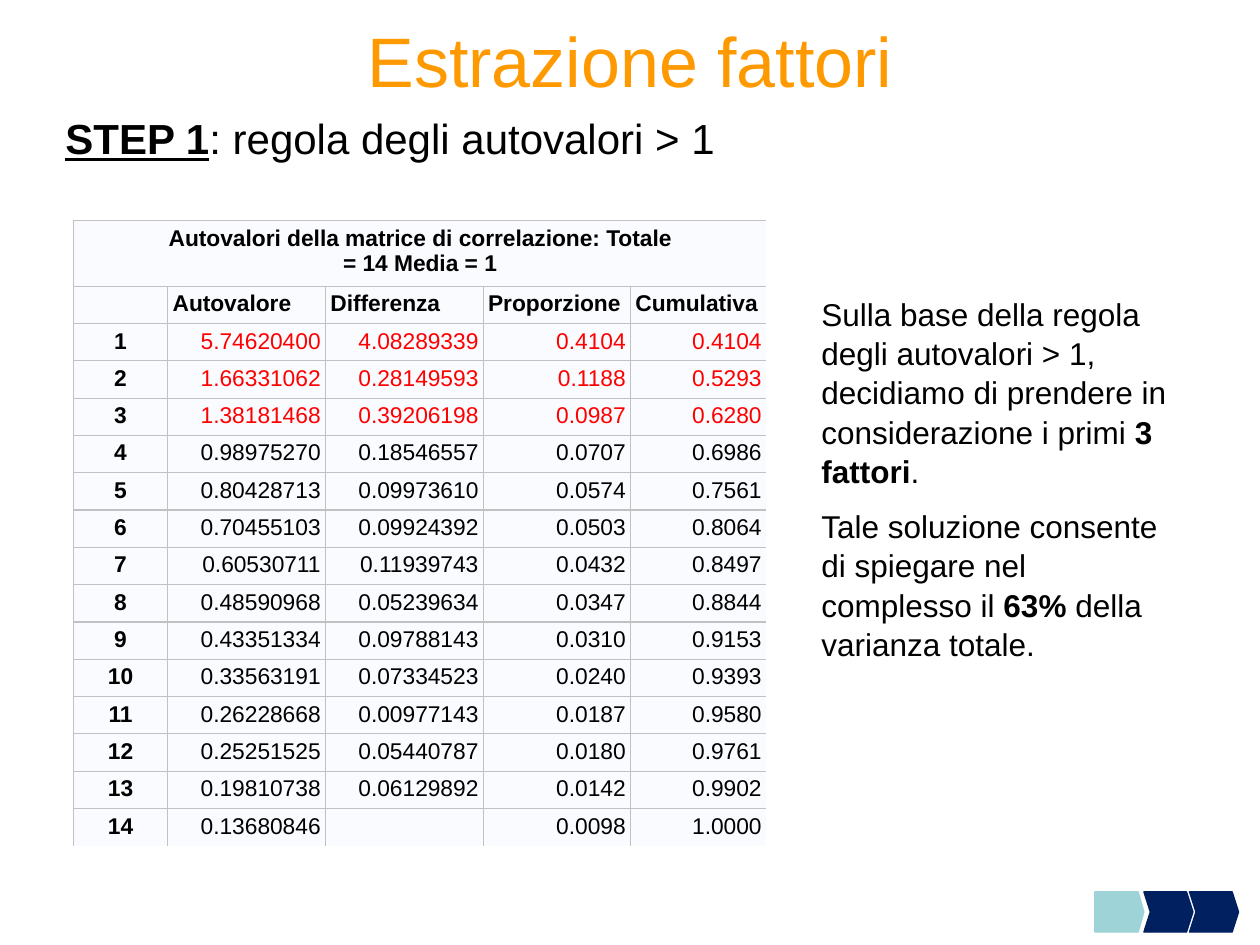
from dataclasses import dataclass

from lxml.etree import SubElement
from pptx import Presentation
from pptx.dml.color import RGBColor
from pptx.enum.shapes import MSO_SHAPE
from pptx.enum.text import MSO_ANCHOR, PP_ALIGN
from pptx.oxml.ns import qn
from pptx.util import Cm, Pt


@dataclass(frozen=True)
class Theme:
    font: str = "Arial"
    title: str = "FF9900"
    text: str = "000000"
    accent: str = "FF0000"
    cell: str = "FAFBFE"
    border: str = "C1C1C1"
    navy: str = "002060"
    aqua: str = "9ED3D7"
    title_size: float = 40
    step_size: float = 24
    body_size: float = 18
    table_size: float = 13
    line_width: float = 0.75
    leading: float = 1.04


THEME = Theme()
TABLE_TITLE = "Autovalori della matrice di correlazione: Totale\v= 14 Media = 1"
HEADERS = ["", "Autovalore", "Differenza", "Proporzione", "Cumulativa"]
EIGENVALUES = [
    ("5.74620400", "4.08289339", "0.4104", "0.4104"),
    ("1.66331062", "0.28149593", "0.1188", "0.5293"),
    ("1.38181468", "0.39206198", "0.0987", "0.6280"),
    ("0.98975270", "0.18546557", "0.0707", "0.6986"),
    ("0.80428713", "0.09973610", "0.0574", "0.7561"),
    ("0.70455103", "0.09924392", "0.0503", "0.8064"),
    ("0.60530711", "0.11939743", "0.0432", "0.8497"),
    ("0.48590968", "0.05239634", "0.0347", "0.8844"),
    ("0.43351334", "0.09788143", "0.0310", "0.9153"),
    ("0.33563191", "0.07334523", "0.0240", "0.9393"),
    ("0.26228668", "0.00977143", "0.0187", "0.9580"),
    ("0.25251525", "0.05440787", "0.0180", "0.9761"),
    ("0.19810738", "0.06129892", "0.0142", "0.9902"),
    ("0.13680846", "", "0.0098", "1.0000"),
]
COL_WIDTHS = [1.9, 3.18, 3.18, 2.97, 2.74]
TITLE_ROW, ROW = 1.32, 0.75
KEPT_FACTORS = 3


def set_attrs(obj, values):
    for name, value in values.items():
        setattr(obj, name, value)


def format_run(r, size, color=THEME.text, **extra):
    set_attrs(r.font, {"name": THEME.font, "size": Pt(size), **extra})
    r.font.color.rgb = RGBColor.from_string(color)


def add_text(s, box, paragraphs, size, color=THEME.text, frame=None, para=None):
    tf = s.shapes.add_textbox(*map(Cm, box)).text_frame
    set_attrs(tf, {"word_wrap": True, **(frame or {})})
    for i, runs in enumerate(paragraphs):
        p = tf.add_paragraph() if i else tf.paragraphs[0]
        set_attrs(p, para or {})
        if i:
            p.space_before = Pt(size / 2)
        for text, style in runs:
            r = p.add_run()
            r.text = text
            format_run(r, size, color, **style)


def set_borders(cell, last_col, last_row):
    tc_pr = cell._tc.get_or_add_tcPr()
    hidden = {"R": last_col, "B": last_row}
    for side in "LRTB":
        ln = SubElement(tc_pr, qn(f"a:ln{side}"), w=str(Pt(THEME.line_width)))
        if hidden.get(side):
            SubElement(ln, qn("a:noFill"))
        else:
            fill = SubElement(ln, qn("a:solidFill"))
            SubElement(fill, qn("a:srgbClr"), val=THEME.border)


def fill_cell(cell, text, align, color, bold):
    sides = ("left", "right", "top", "bottom")
    set_attrs(cell, {f"margin_{side}": Cm(0.1) for side in sides})
    cell.fill.solid()
    cell.fill.fore_color.rgb = RGBColor.from_string(THEME.cell)
    p = cell.text_frame.paragraphs[0]
    p.text = text
    p.alignment = align
    for r in p.runs:
        format_run(r, THEME.table_size, color, bold=bold)
    if not text:
        SubElement(p._p, qn("a:endParaRPr"), sz=str(int(THEME.table_size * 100)))


def add_eigenvalue_table(s):
    rows = [[TABLE_TITLE, "", "", "", ""], HEADERS]
    rows += [[str(n), *values] for n, values in enumerate(EIGENVALUES, 1)]
    heights = [TITLE_ROW] + [ROW] * (len(rows) - 1)
    box = (1.48, 4.45, sum(COL_WIDTHS), sum(heights))
    table = s.shapes.add_table(len(rows), len(HEADERS), *map(Cm, box)).table
    set_attrs(table, {"first_row": False, "horz_banding": False})
    for col, width in zip(table.columns, COL_WIDTHS):
        col.width = Cm(width)
    for row, height in zip(table.rows, heights):
        row.height = Cm(height)
    table.cell(0, 0).merge(table.cell(0, len(HEADERS) - 1))
    for i, row in enumerate(rows):
        for j, text in enumerate(row):
            cell = table.cell(i, j)
            number = i > 1 and j > 0
            kept = number and i < 2 + KEPT_FACTORS
            if number:
                align = PP_ALIGN.RIGHT
            else:
                align = PP_ALIGN.LEFT if i == 1 else PP_ALIGN.CENTER
            last_col = i == 0 or j == len(row) - 1
            set_borders(cell, last_col, i == len(rows) - 1)
            color = THEME.accent if kept else THEME.text
            fill_cell(cell, text, align, color, not number)


def add_arrow(s, kind, left, color, adjustment):
    sp = s.shapes.add_shape(kind, *map(Cm, (left, 17.98, 0.99, 0.81)))
    sp.shadow.inherit = False
    sp.adjustments[0] = adjustment
    sp.fill.solid()
    for fmt in (sp.fill.fore_color, sp.line.color):
        fmt.rgb = RGBColor.from_string(color)
    sp.line.width = Pt(THEME.line_width)


def main():
    prs = Presentation()
    set_attrs(prs, {"slide_width": Cm(25.4), "slide_height": Cm(19.05)})
    s = prs.slides.add_slide(prs.slide_layouts[6])
    bold, plain = {"bold": True}, {}
    leading = {"line_spacing": THEME.leading}

    add_text(s, (1.27, -0.43, 22.86, 3.18), [[("Estrazione fattori", plain)]],
             THEME.title_size, THEME.title,
             frame={"vertical_anchor": MSO_ANCHOR.MIDDLE},
             para={"alignment": PP_ALIGN.CENTER, **leading})
    add_text(s, (1.07, 2.11, 14.4, 1.27),
             [[("STEP 1", {"bold": True, "underline": True}),
               (": regola degli autovalori > 1", plain)]],
             THEME.step_size, para=leading)
    add_eigenvalue_table(s)
    add_text(s, (16.31, 5.79, 7.77, 7.57),
             [[("Sulla base della regola degli autovalori > 1, decidiamo di "
                "prendere in considerazione i primi ", plain),
               ("3 fattori", bold), (".", plain)],
              [("Tale soluzione consente di spiegare nel complesso il ", plain),
               ("63%", bold), (" della varianza totale.", plain)]],
             THEME.body_size, para=leading)
    add_arrow(s, MSO_SHAPE.CHEVRON, 23.98, THEME.navy, 0.16)
    add_arrow(s, MSO_SHAPE.PENTAGON, 22.07, THEME.aqua, 0.14)
    add_arrow(s, MSO_SHAPE.CHEVRON, 23.06, THEME.navy, 0.16)
    prs.save("out.pptx")


if __name__ == "__main__":
    main()
